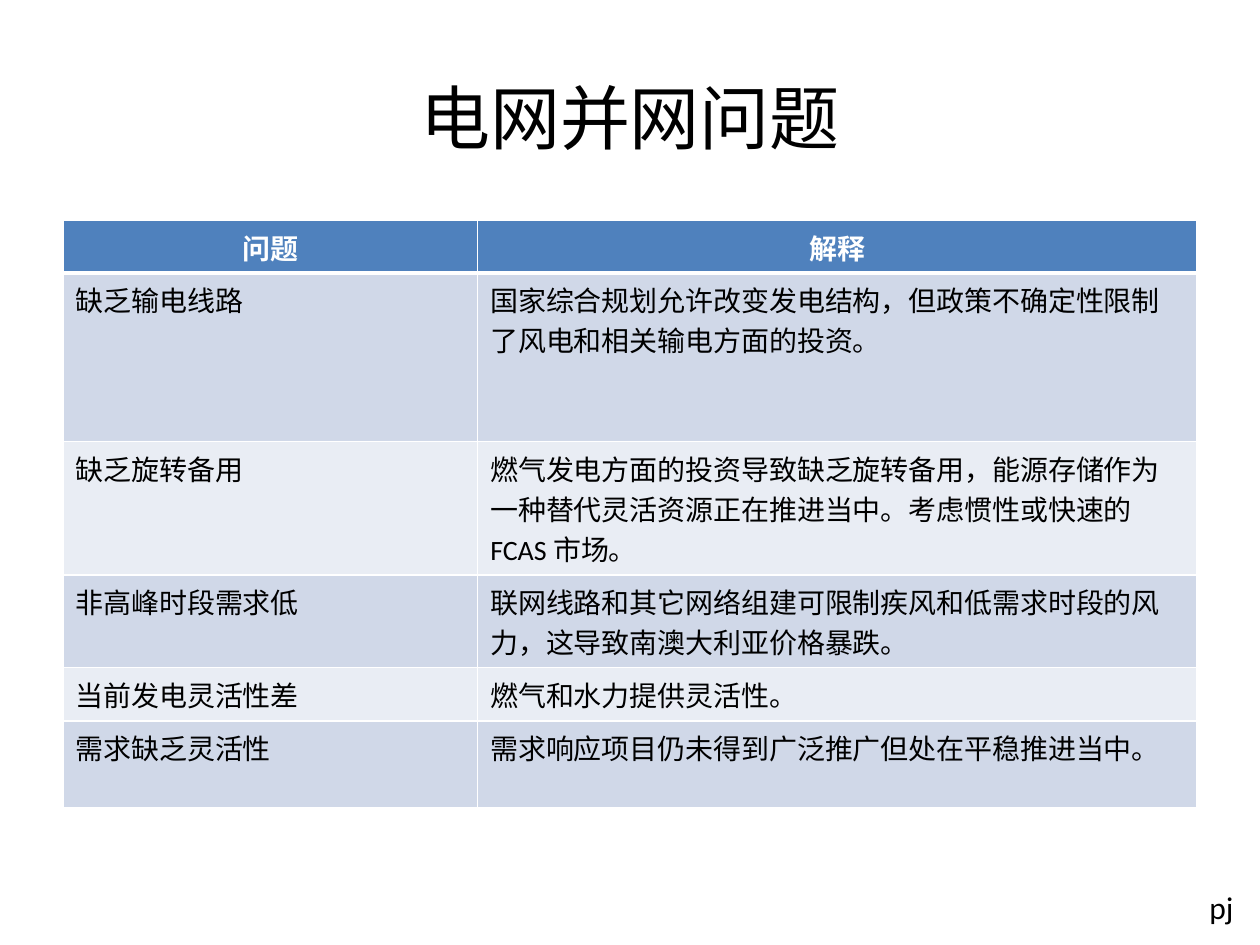
from typing import NamedTuple

from lxml.etree import SubElement
from pptx import Presentation
from pptx.dml.color import RGBColor
from pptx.enum.text import MSO_ANCHOR, PP_ALIGN
from pptx.oxml.ns import qn
from pptx.util import Cm, Pt

COLORS = {
    "text": "000000",
    "white": "FFFFFF",
    "header": "4F81BD",
    "band_dark": "D0D8E8",
    "band_light": "E9EDF4",
}
FONT = "Calibri"
COLUMN_WIDTHS = (8.36, 14.5)


class Issue(NamedTuple):
    name: str
    explanation: str
    height: float


class Label(NamedTuple):
    text: str
    left: float
    top: float
    width: float
    height: float
    size: int
    align: PP_ALIGN
    anchor: MSO_ANCHOR
    wrap: bool


HEADER = Issue("问题", "解释", 1.05)
ISSUES = (
    Issue("缺乏输电线路", "国家综合规划允许改变发电结构，但政策不确定性限制了风电和相关输电方面的投资。", 3.4),
    Issue(
        "缺乏旋转备用",
        "燃气发电方面的投资导致缺乏旋转备用，能源存储作为一种替代灵活资源正在推进当中。考虑惯性或快速的FCAS 市场。",
        2.69,
    ),
    Issue("非高峰时段需求低", "联网线路和其它网络组建可限制疾风和低需求时段的风力，这导致南澳大利亚价格暴跌。", 1.87),
    Issue("当前发电灵活性差", "燃气和水力提供灵活性。", 1.07),
    Issue("需求缺乏灵活性", "需求响应项目仍未得到广泛推广但处在平稳推进当中。", 1.75),
)
LABELS = (
    Label("pj", 24.13, 17.78, 1.07, 1.07, 18, PP_ALIGN.LEFT, MSO_ANCHOR.TOP, False),
    Label("电网并网问题", 1.27, 0.76, 22.86, 3.18, 40, PP_ALIGN.CENTER, MSO_ANCHOR.MIDDLE, True),
)


def rgb(name: str) -> RGBColor:
    return RGBColor.from_string(COLORS[name])


def style_paragraph(para, size: int, color: str, align: PP_ALIGN, bold: bool = False) -> None:
    para.alignment = align
    para.font.name = FONT
    para.font.size = Pt(size)
    para.font.bold = bold
    para.font.color.rgb = rgb(color)


def add_label(page, label: Label) -> None:
    box = page.shapes.add_textbox(Cm(label.left), Cm(label.top), Cm(label.width), Cm(label.height))
    frame = box.text_frame
    frame.word_wrap = label.wrap
    frame.vertical_anchor = label.anchor
    frame.text = label.text
    style_paragraph(frame.paragraphs[0], label.size, "text", label.align)


def add_borders(cell, top: int, bottom: int) -> None:
    """Draw white cell borders; top and bottom widths are in points."""
    properties = cell._tc.get_or_add_tcPr()
    for side, width in (("L", 1), ("R", 1), ("T", top), ("B", bottom)):
        line = SubElement(properties, qn(f"a:ln{side}"), w=str(Pt(width)))
        fill = SubElement(line, qn("a:solidFill"))
        SubElement(fill, qn("a:srgbClr"), val=COLORS["white"])


def add_issue_table(page) -> None:
    rows = (HEADER, *ISSUES)
    table = page.shapes.add_table(
        len(rows), len(COLUMN_WIDTHS), Cm(1.27), Cm(4.45),
        Cm(sum(COLUMN_WIDTHS)), Cm(sum(row.height for row in rows)),
    ).table
    for column, width in zip(table.columns, COLUMN_WIDTHS):
        column.width = Cm(width)

    for index, issue in enumerate(rows):
        table.rows[index].height = Cm(issue.height)
        is_header = index == 0
        band = "header" if is_header else "band_dark" if index % 2 else "band_light"
        for column, text in enumerate((issue.name, issue.explanation)):
            cell = table.cell(index, column)
            cell.text = text
            add_borders(cell, top=3 if index == 1 else 1, bottom=3 if is_header else 1)
            cell.fill.solid()
            cell.fill.fore_color.rgb = rgb(band)
            style_paragraph(
                cell.text_frame.paragraphs[0], 16,
                "white" if is_header else "text",
                PP_ALIGN.CENTER if is_header else PP_ALIGN.LEFT,
                bold=is_header,
            )


def main() -> None:
    deck = Presentation()
    deck.slide_width, deck.slide_height = Cm(25.4), Cm(19.05)
    page = deck.slides.add_slide(deck.slide_layouts[6])
    for label in LABELS:
        add_label(page, label)
    add_issue_table(page)
    deck.save("out.pptx")


if __name__ == "__main__":
    main()
